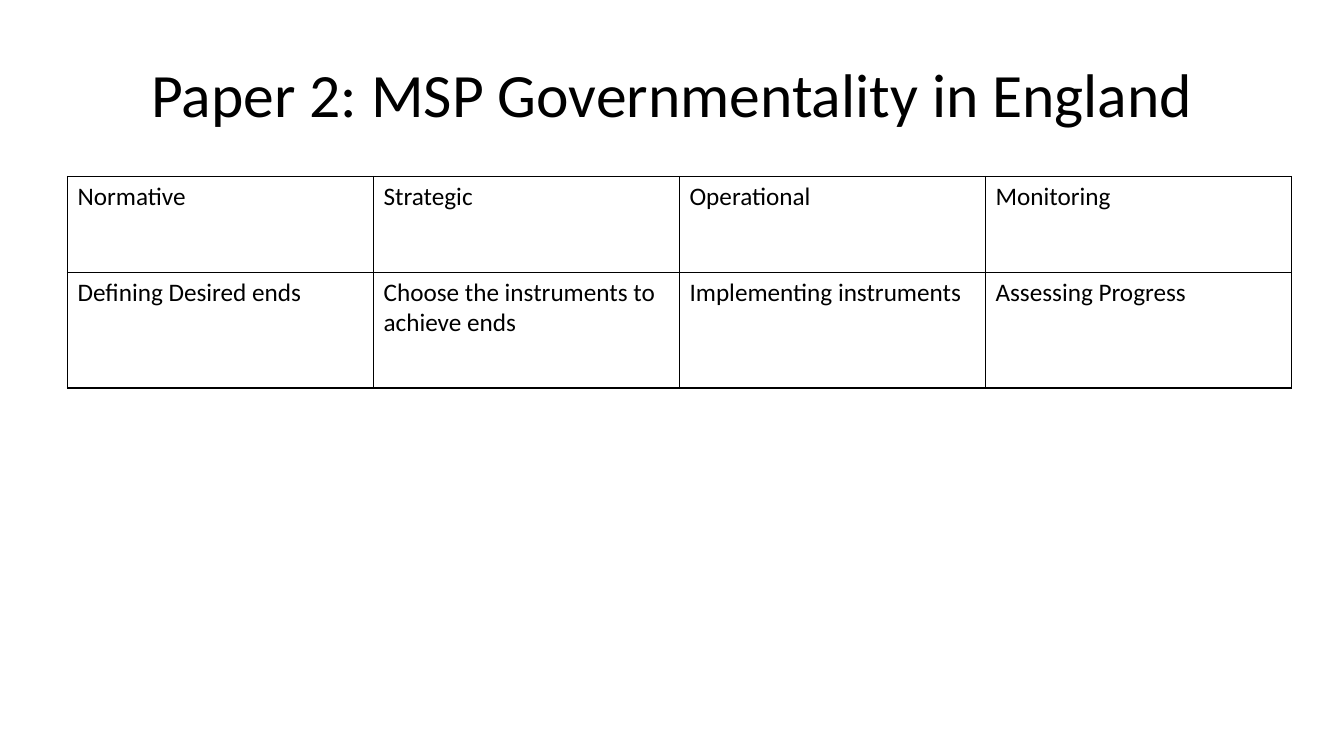
"""Build a slide with a table of the four stages of governance."""
import pptx
import pptx.dml.color
import pptx.enum.text
import pptx.oxml
import pptx.oxml.ns
import pptx.util

Inches = pptx.util.Inches
COLOURS = {"text": "000000", "border": "000000", "cell": "FFFFFF"}
STAGES = [
    ("Normative", "Defining Desired ends"),
    ("Strategic", "Choose the instruments to achieve ends"),
    ("Operational", "Implementing instruments"),
    ("Monitoring", "Assessing Progress"),
]
ROW_HEIGHTS = (0.95, 1.15)


class SlideBuilder:
    def __init__(self, slide, font_name):
        self.slide = slide
        self.font_name = font_name

    def format_paragraph(self, paragraph, size):
        paragraph.font.name = self.font_name
        paragraph.font.size = pptx.util.Pt(size)
        paragraph.font.bold = False
        paragraph.font.color.rgb = pptx.dml.color.RGBColor.from_string(COLOURS["text"])

    def add_title(self, text, left, top, width, height):
        title = self.slide.shapes.title
        title.left, title.top = Inches(left), Inches(top)
        title.width, title.height = Inches(width), Inches(height)
        title.text_frame.text = text
        title.text_frame.vertical_anchor = pptx.enum.text.MSO_ANCHOR.MIDDLE
        paragraph = title.text_frame.paragraphs[0]
        paragraph.alignment = pptx.enum.text.PP_ALIGN.CENTER
        self.format_paragraph(paragraph, 44)

    def add_borders(self, cell):
        properties = cell._tc.get_or_add_tcPr()
        for side in ("lnL", "lnR", "lnT", "lnB"):
            properties.append(pptx.oxml.parse_xml(
                f'<a:{side} {pptx.oxml.ns.nsdecls("a")} w="{pptx.util.Pt(1)}">'
                f'<a:solidFill><a:srgbClr val="{COLOURS["border"]}"/></a:solidFill>'
                f'</a:{side}>'))

    def add_table(self, columns, row_heights, left, top, width):
        table = self.slide.shapes.add_table(
            len(row_heights), len(columns), Inches(left), Inches(top),
            Inches(width), Inches(sum(row_heights))).table
        table.first_row = False
        table.horz_banding = False
        for row, height in zip(table.rows, row_heights):
            row.height = Inches(height)
        for column_index, texts in enumerate(columns):
            for row_index, text in enumerate(texts):
                cell = table.cell(row_index, column_index)
                cell.text = text
                self.format_paragraph(cell.text_frame.paragraphs[0], 18)
                self.add_borders(cell)
                cell.fill.solid()
                cell.fill.fore_color.rgb = pptx.dml.color.RGBColor.from_string(COLOURS["cell"])


def main():
    presentation = pptx.Presentation()
    presentation.slide_width = Inches(13.33)
    presentation.slide_height = Inches(7.5)
    slide = presentation.slides.add_slide(presentation.slide_layouts[5])
    builder = SlideBuilder(slide, "Calibri")
    builder.add_title("Paper 2: MSP Governmentality in England", 0.67, 0.3, 12, 1.25)
    builder.add_table(STAGES, ROW_HEIGHTS, 0.67, 1.75, 12.14)
    presentation.save("out.pptx")


if __name__ == "__main__":
    main()
